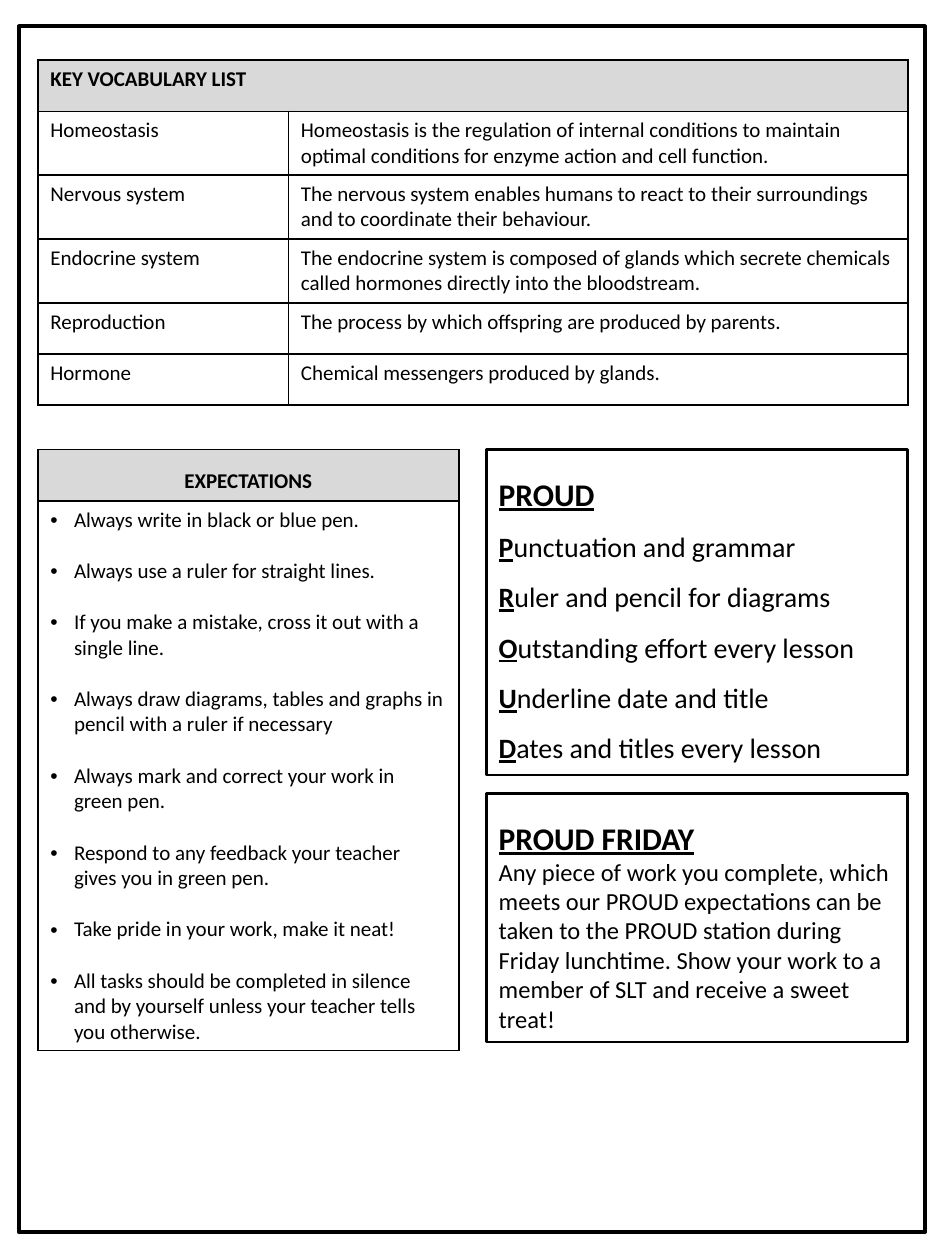
"""Build a one-page science sheet with key vocabulary, expectations and PROUD rules."""
import pptx
import pptx.dml.color
import pptx.enum.shapes
import pptx.enum.text
import pptx.oxml
import pptx.oxml.ns
import pptx.util

Pt = pptx.util.Pt
BLACK = pptx.dml.color.RGBColor(0x00, 0x00, 0x00)
GREY = pptx.dml.color.RGBColor(0xD9, 0xD9, 0xD9)
RECTANGLE = pptx.enum.shapes.MSO_SHAPE.RECTANGLE
ALIGN = pptx.enum.text.PP_ALIGN

LEFT = 21.6
LOWER_TOP = 257
COLUMN_WIDTH = 240.6
RIGHT_LEFT = 277.9
LINE_HEIGHT = 14.65
HEADER_HEIGHT = 29.2
DEFINITION_HEIGHT = 36.5
BULLET_INDENT = 13.5

BODY = {"size": Pt(12), "bold": False, "underline": False}
HEADER = {**BODY, "bold": True}
TITLE = {"size": Pt(18), "bold": True, "underline": True}
INITIAL = {**TITLE, "size": Pt(16)}
RULE = {**BODY, "size": Pt(16)}
NOTE = {**BODY, "size": Pt(14)}

VOCABULARY = [
    ("Homeostasis", "Homeostasis is the regulation of internal conditions to maintain "
     "optimal conditions for enzyme action and cell function."),
    ("Nervous system", "The nervous system enables humans to react to their surroundings "
     "and to coordinate their behaviour."),
    ("Endocrine system", "The endocrine system is composed of glands which secrete chemicals "
     "called hormones directly into the bloodstream."),
    ("Reproduction", "The process by which offspring are produced by parents."),
    ("Hormone", "Chemical messengers produced by glands."),
]
VOCABULARY_HEIGHTS = [HEADER_HEIGHT] + [DEFINITION_HEIGHT] * 3 + [HEADER_HEIGHT] * 2
EXPECTATIONS = [
    "Always write in black or blue pen.",
    "Always use a ruler for straight lines.",
    "If you make a mistake, cross it out with a single line.",
    "Always draw diagrams, tables and graphs in pencil with a ruler if necessary",
    "Always mark and correct your work in green pen.",
    "Respond to any feedback your teacher gives you in green pen.",
    "Take pride in your work, make it neat!",
    "All tasks should be completed in silence and by yourself unless your teacher "
    "tells you otherwise.",
]
PROUD_RULES = [
    "Punctuation and grammar",
    "Ruler and pencil for diagrams",
    "Outstanding effort every lesson",
    "Underline date and title",
    "Dates and titles every lesson",
]
FRIDAY_TEXT = (
    "Any piece of work you complete, which meets our PROUD expectations can be taken to "
    "the PROUD station during Friday lunchtime. Show your work to a member of SLT and "
    "receive a sweet treat!"
)


def add_run(paragraph, text, text_format):
    run = paragraph.add_run()
    run.text = text
    run.font.color.rgb = BLACK
    for name, value in {"name": "Calibri", **text_format}.items():
        setattr(run.font, name, value)


def add_grid(position, column_widths, row_heights):
    size = Pt(sum(column_widths)), Pt(sum(row_heights))
    table = slide.shapes.add_table(
        len(row_heights), len(column_widths), *map(Pt, position), *size).table
    table.first_row = table.horz_banding = False
    for column, width in zip(table.columns, column_widths):
        column.width = Pt(width)
    for index, (row, height) in enumerate(zip(table.rows, row_heights)):
        row.height = Pt(height)
        for cell in row.cells:
            if index == 0:
                cell.fill.solid()
                cell.fill.fore_color.rgb = GREY
            else:
                cell.fill.background()
            properties = cell._tc.get_or_add_tcPr()
            for place, side in enumerate(("lnL", "lnR", "lnT", "lnB")):
                properties.insert(place, pptx.oxml.parse_xml(
                    f'<a:{side} {pptx.oxml.ns.nsdecls("a")} w="{Pt(1)}">'
                    f'<a:solidFill><a:srgbClr val="{BLACK}"/></a:solidFill></a:{side}>'))
    return table


presentation = pptx.Presentation()
presentation.slide_width = Pt(540)
presentation.slide_height = Pt(720)
slide = presentation.slides.add_slide(presentation.slide_layouts[6])

boxes = []
for left, top, width, height, line_width in [
    (10.8, 15.1, 517.7, 689, 2.25),
    (RIGHT_LEFT, LOWER_TOP, COLUMN_WIDTH, 185.8, 1.5),
    (RIGHT_LEFT, 453.6, COLUMN_WIDTH, 141.8, 1.5),
]:
    shape = slide.shapes.add_shape(RECTANGLE, Pt(left), Pt(top), Pt(width), Pt(height))
    shape.shadow.inherit = False
    shape.fill.background()
    shape.line.color.rgb = BLACK
    shape.line.width = Pt(line_width)
    boxes.append(shape)
frame_box, proud_box, friday_box = boxes

vocabulary_table = add_grid((LEFT, 34.4), (143.2, 354), VOCABULARY_HEIGHTS)
vocabulary_table.cell(0, 0).merge(vocabulary_table.cell(0, 1))
add_run(vocabulary_table.cell(0, 0).text_frame.paragraphs[0], "KEY VOCABULARY LIST", HEADER)
for row, entry in enumerate(VOCABULARY, start=1):
    for column, text in enumerate(entry):
        add_run(vocabulary_table.cell(row, column).text_frame.paragraphs[0], text, BODY)

expectations_table = add_grid((LEFT, LOWER_TOP), (COLUMN_WIDTH,), (HEADER_HEIGHT, 314.2))
paragraph = expectations_table.cell(0, 0).text_frame.paragraphs[0]
paragraph.alignment = ALIGN.CENTER
paragraph.line_spacing = 1.5
add_run(paragraph, "EXPECTATIONS", HEADER)
text_frame = expectations_table.cell(1, 0).text_frame
for index, text in enumerate(EXPECTATIONS):
    paragraph = text_frame.add_paragraph() if index else text_frame.paragraphs[0]
    paragraph.space_before = Pt(LINE_HEIGHT if index else 0)
    properties = paragraph._p.get_or_add_pPr()
    properties.set("marL", str(Pt(BULLET_INDENT)))
    properties.set("indent", str(-Pt(BULLET_INDENT)))
    for bullet in ('<a:buFont {} typeface="Arial"/>', '<a:buChar {} char="•"/>'):
        properties.append(pptx.oxml.parse_xml(bullet.format(pptx.oxml.ns.nsdecls("a"))))
    add_run(paragraph, text, BODY)

for box, title in ((proud_box, "PROUD"), (friday_box, "PROUD FRIDAY")):
    text_frame = box.text_frame
    text_frame.word_wrap = True
    text_frame.auto_size = pptx.enum.text.MSO_AUTO_SIZE.SHAPE_TO_FIT_TEXT
    text_frame.vertical_anchor = pptx.enum.text.MSO_ANCHOR.TOP
    paragraph = text_frame.paragraphs[0]
    paragraph.alignment = ALIGN.LEFT
    paragraph.line_spacing = 1.5
    add_run(paragraph, title, TITLE)

for rule in PROUD_RULES:
    paragraph = proud_box.text_frame.add_paragraph()
    paragraph.alignment = ALIGN.LEFT
    paragraph.line_spacing = 1.5
    add_run(paragraph, rule[0], INITIAL)
    add_run(paragraph, rule[1:], RULE)

paragraph = friday_box.text_frame.add_paragraph()
paragraph.alignment = ALIGN.LEFT
add_run(paragraph, FRIDAY_TEXT, NOTE)

presentation.save("out.pptx")
